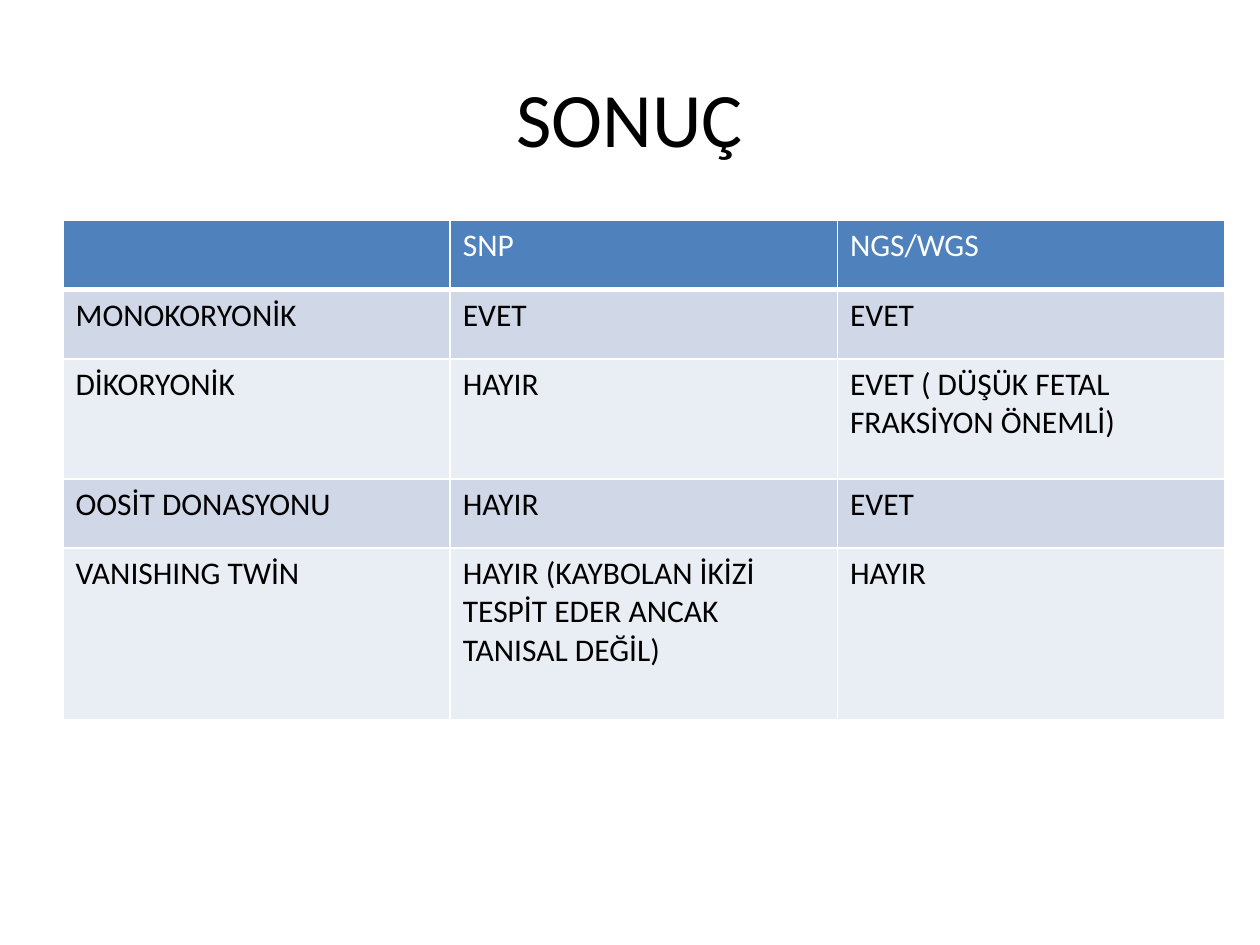
import dataclasses

import lxml.etree
import pptx
import pptx.dml.color
import pptx.enum.text
import pptx.oxml.ns
import pptx.util

Pt = pptx.util.Pt


@dataclasses.dataclass(frozen=True)
class Theme:
    font: str = "Calibri"
    title_size: float = 44
    body_size: float = 18
    text: str = "000000"
    header_text: str = "FFFFFF"
    header_fill: str = "4F81BD"
    bands: tuple[str, str] = ("D0D8E8", "E9EDF4")
    border: str = "FFFFFF"
    border_width: float = 1
    header_rule: float = 3


@dataclasses.dataclass(frozen=True)
class Row:
    height: float
    texts: tuple[str, str, str]


THEME = Theme()
TABLE_LEFT, TABLE_TOP, COLUMN_WIDTH = 36, 126, 221.28
ROWS = [
    Row(39.6, ("", "SNP", "NGS/WGS")),
    Row(39.6, ("MONOKORYONİK", "EVET", "EVET")),
    Row(68.4, ("DİKORYONİK", "HAYIR", "EVET ( DÜŞÜK FETAL FRAKSİYON ÖNEMLİ)")),
    Row(39.6, ("OOSİT DONASYONU", "HAYIR", "EVET")),
    Row(97.92, ("VANISHING TWİN",
                "HAYIR (KAYBOLAN İKİZİ TESPİT EDER ANCAK TANISAL DEĞİL)", "HAYIR")),
]


def rgb(color: str) -> pptx.dml.color.RGBColor:
    return pptx.dml.color.RGBColor.from_string(color)


def add_run(p, text: str, size: float, color: str) -> None:
    r = p.add_run()
    r.text = text
    r.font.name = THEME.font
    r.font.size = Pt(size)
    r.font.bold = False
    r.font.color.rgb = rgb(color)


def add_title(s, text: str) -> None:
    sp = s.shapes.title
    sp.left, sp.top, sp.width, sp.height = Pt(36), Pt(21.6), Pt(648), Pt(90)
    tf = sp.text_frame
    tf.vertical_anchor = pptx.enum.text.MSO_ANCHOR.MIDDLE
    p = tf.paragraphs[0]
    p.alignment = pptx.enum.text.PP_ALIGN.CENTER
    add_run(p, text, THEME.title_size, THEME.text)


def set_borders(cell, bottom: float) -> None:
    qn = pptx.oxml.ns.qn
    tc_pr = cell._tc.get_or_add_tcPr()
    for side in "LRTB":
        width = bottom if side == "B" else THEME.border_width
        ln = lxml.etree.SubElement(tc_pr, qn(f"a:ln{side}"), w=str(Pt(width)))
        fill = lxml.etree.SubElement(ln, qn("a:solidFill"))
        lxml.etree.SubElement(fill, qn("a:srgbClr"), val=THEME.border)


def add_table(s, rows: list[Row]) -> None:
    columns = len(rows[0].texts)
    table = s.shapes.add_table(
        len(rows), columns, Pt(TABLE_LEFT), Pt(TABLE_TOP),
        Pt(COLUMN_WIDTH * columns), Pt(sum(row.height for row in rows))).table
    for column in table.columns:
        column.width = Pt(COLUMN_WIDTH)
    for i, row in enumerate(rows):
        table.rows[i].height = Pt(row.height)
        header = i == 0
        fill = THEME.header_fill if header else THEME.bands[(i - 1) % 2]
        color = THEME.header_text if header else THEME.text
        for j, text in enumerate(row.texts):
            cell = table.cell(i, j)
            # Borders come before the fill in the cell properties
            set_borders(cell, THEME.header_rule if header else THEME.border_width)
            cell.fill.solid()
            cell.fill.fore_color.rgb = rgb(fill)
            if text:
                add_run(cell.text_frame.paragraphs[0], text, THEME.body_size, color)


def main() -> None:
    prs = pptx.Presentation()
    prs.slide_width, prs.slide_height = Pt(720), Pt(540)
    s = prs.slides.add_slide(prs.slide_layouts[5])  # title only
    add_title(s, "SONUÇ")
    add_table(s, ROWS)
    prs.save("out.pptx")


if __name__ == "__main__":
    main()
